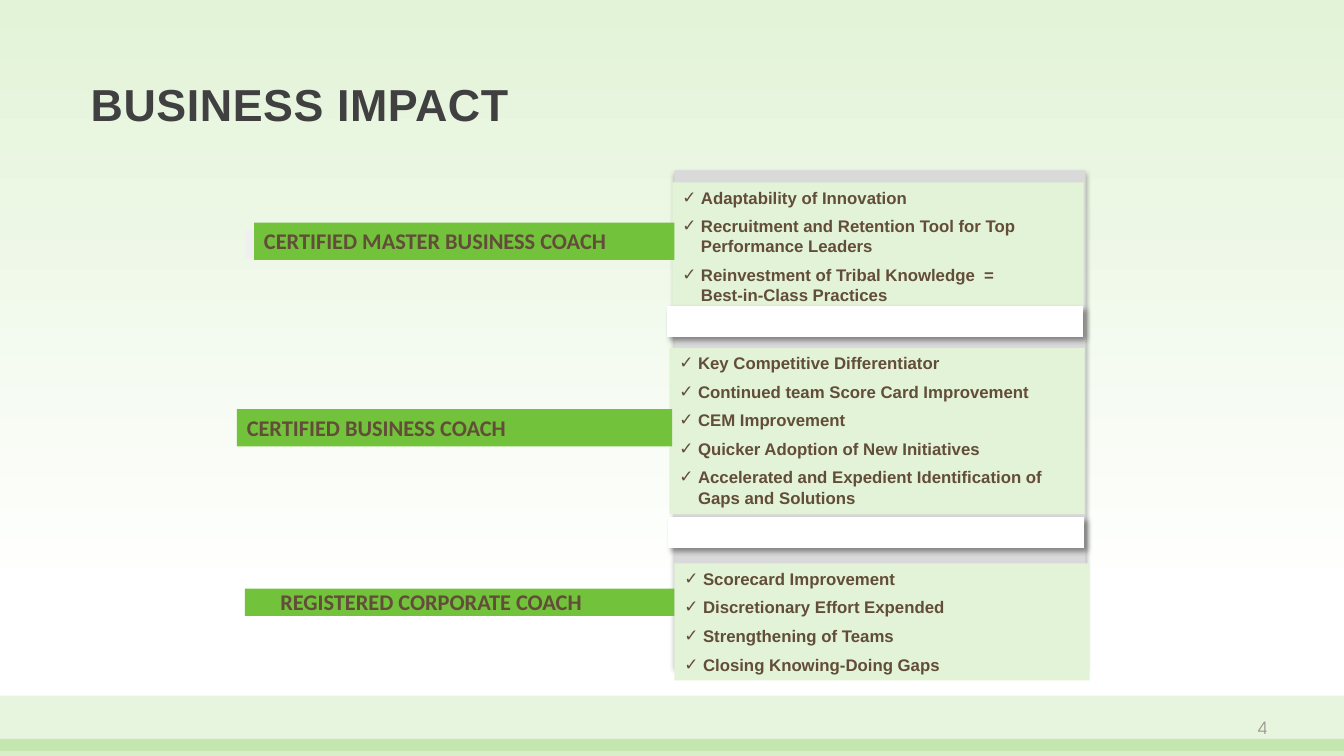
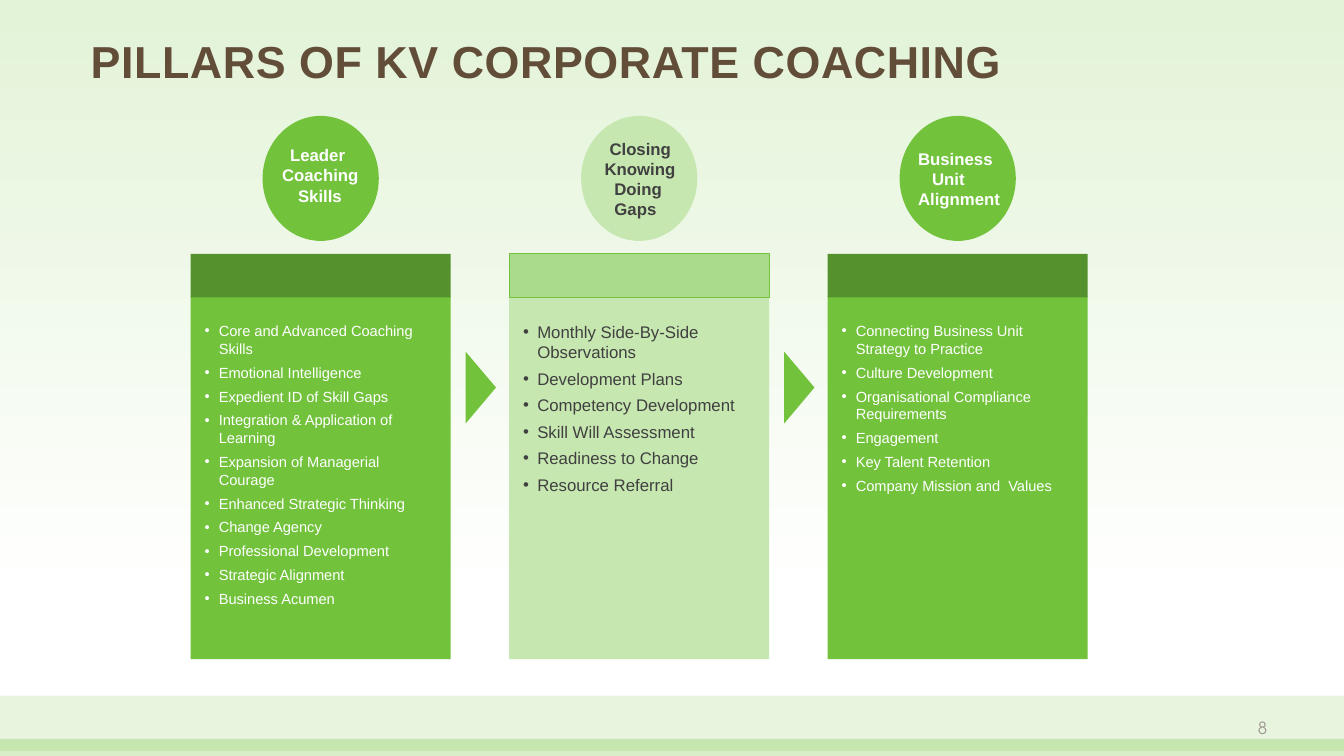
"""Build two coaching slides: business impact and coaching pillars."""
from copy import deepcopy
from dataclasses import dataclass

from lxml.etree import SubElement as Sub
from pptx import Presentation
from pptx.dml.color import RGBColor as Rgb
from pptx.enum.shapes import MSO_CONNECTOR as Link, MSO_SHAPE as Kind
from pptx.enum.text import MSO_ANCHOR as Anchor, MSO_AUTO_SIZE as Fit, PP_ALIGN as Align
from pptx.oxml.ns import qn
from pptx.util import Pt


@dataclass(frozen=True)
class Theme:
    """Colours, fonts and type sizes."""
    green: str = "72C23C"
    dark: str = "55922D"
    soft: str = "AADB8A"
    pale: str = "C7E7B1"
    mint: str = "E3F3D8"
    white: str = "FFFFFF"
    black: str = "000000"
    back: str = "D9D9D9"
    strip: str = "F0F0F0"
    brown: str = "624D38"
    ink: str = "404040"
    note: str = "9E9791"
    sans: str = "Arial"
    label: str = "Calibri"
    folio: str = "TeX Gyre Adventor"
    head: float = 32
    bar: float = 16
    text: float = 12
    small: float = 10.5


T = Theme()

BANDS = [(496.8, 39.6, 17), (527.8, 12.2, 28)]

IMPACT = dict(title="BUSINESS IMPACT", color=T.ink, top=51, page="4")
PANELS = [
    ((480.2, 130.3, 293.8, 92.2), [
        "Adaptability of Innovation",
        "Recruitment and Retention Tool for Top Performance Leaders",
        "Reinvestment of Tribal Knowledge  =\nBest-in-Class Practices"]),
    ((478.1, 248.4, 296.6, 118.8), [
        "Key Competitive Differentiator",
        "Continued team Score Card Improvement",
        "CEM Improvement",
        "Quicker Adoption of New Initiatives",
        "Accelerated and Expedient Identification of Gaps and Solutions"]),
    ((481.7, 402.5, 296.6, 83.5), [
        "Scorecard Improvement",
        "Discretionary Effort Expended",
        "Strengthening of Teams",
        "Closing Knowing-Doing Gaps"]),
]
BARS = [
    ("CERTIFIED MASTER BUSINESS COACH", (181.5, 159.1, 300.2, 26.6), 7.2),
    ("CERTIFIED BUSINESS COACH", (169.2, 292.3, 311, 26.6), 7.2),
    ("REGISTERED CORPORATE COACH", (175, 420.5, 306.7, 19.4), 25.2),
]
RULES = [(487.4, 229.7), (488.2, 380.2)]

PILLARS = dict(title="PILLARS OF KV CORPORATE COACHING", color=T.brown, top=20.2, page="8")
COLUMNS = [
    dict(name=["Leader", "Coaching", "Skills"], dents=[19.3, 13.6, 25], lift=2.5,
         fill=T.green, cap=T.dark, edge=None, ink=T.white, size=T.small,
         items=["Core and Advanced Coaching Skills", "Emotional Intelligence",
                "Expedient ID of Skill Gaps", "Integration & Application of Learning",
                "Expansion of Managerial Courage", "Enhanced Strategic Thinking",
                "Change Agency", "Professional Development", "Strategic Alignment",
                "Business Acumen"]),
    dict(name=["Closing", "Knowing", "Doing", "Gaps"], dents=[20, 16.5, 23.5, 23.5], lift=0,
         fill=T.pale, cap=T.soft, edge=T.green, ink=T.ink, size=T.text,
         items=["Monthly Side-By-Side Observations", "Development Plans",
                "Competency Development", "Skill Will Assessment",
                "Readiness to Change", "Resource Referral"]),
    dict(name=["Business", "Unit", "Alignment"], dents=[12.9, 22.9, 12.9], lift=0,
         fill=T.green, cap=T.dark, edge=None, ink=T.white, size=T.small,
         items=["Connecting Business Unit Strategy to Practice", "Culture Development",
                "Organisational Compliance Requirements", "Engagement",
                "Key Talent Retention", "Company Mission and  Values"]),
]


def points(nums):
    """Turn numbers into point lengths."""
    return [Pt(num) for num in nums]


def write(shape, lines, size=T.text, color=T.brown, font=T.sans, bold=False,
          align=Align.LEFT, anchor=Anchor.TOP, inset=(7.2, 3.6, 7.2, 3.6),
          gap=0, mark=None, hang=0, dents=None, track=0):
    """Fill a shape with formatted paragraphs."""
    frame = shape.text_frame
    frame.auto_size, frame.word_wrap, frame.vertical_anchor = Fit.NONE, True, anchor
    (frame.margin_left, frame.margin_top,
     frame.margin_right, frame.margin_bottom) = points(inset)
    frame.text = lines[0]
    for line in lines[1:]:
        frame.add_paragraph().text = line
    for para in frame.paragraphs:
        para.alignment, para.space_before = align, Pt(gap)
        for run in para.runs:
            face = run.font
            face.name, face.size, face.bold = font, Pt(size), bold
            face.color.rgb = Rgb.from_string(color)
    for pos, node in enumerate(shape.element.iter(qn("a:p"))):
        props = node.get_or_add_pPr()
        props.set("marL", str(Pt(dents[pos] if dents else hang)))
        props.set("indent", str(-Pt(hang)))
        if mark:
            Sub(props, qn("a:buFont")).set("typeface", font)
            Sub(props, qn("a:buChar")).set("char", mark)
        style = node.find(qn("a:r")).find(qn("a:rPr"))
        if track:
            style.set("spc", str(track))
        for stop in node.findall(qn("a:br")):
            stop.append(deepcopy(style))


def paint(shape, fill, edge=None, alpha=None):
    """Set fill and outline, and drop the shadow."""
    shape.shadow.inherit = False
    shape.fill.solid()
    shape.fill.fore_color.rgb = Rgb.from_string(fill)
    if edge:
        shape.line.color.rgb = Rgb.from_string(edge)
        shape.line.width = Pt(0.75)
    else:
        shape.line.fill.background()
    if alpha:
        tint = shape.element.spPr.find(".//" + qn("a:srgbClr"))
        Sub(tint, qn("a:alpha")).set("val", str(alpha * 1000))
    return shape


def draw(slide, box, fill, kind=Kind.RECTANGLE, **look):
    """Add a painted preset shape."""
    return paint(slide.shapes.add_shape(kind, *points(box)), fill, **look)


def shade(shape, alpha, blur, dist, angle):
    """Cast a black outer shadow."""
    props = shape.element.spPr
    node = props.find(qn("a:effectLst"))
    if node is None:
        node = Sub(props, qn("a:effectLst"))
    cast = Sub(node, qn("a:outerShdw"), blurRad=str(Pt(blur)), dist=str(Pt(dist)),
               dir=str(angle * 60000), algn="ctr", rotWithShape="0")
    tint = Sub(cast, qn("a:srgbClr"), val=T.black)
    Sub(tint, qn("a:alpha"), val=str(alpha * 1000))


def place(shape, box):
    """Move a placeholder to its box and to the front."""
    shape.left, shape.top, shape.width, shape.height = points(box)
    tree = shape.element.getparent()
    tree.append(shape.element)
    return shape


def start(deck, title, color, top, page):
    """Add a slide with title and number; return it with three list holders."""
    slide = deck.slides.add_slide(deck.slide_layouts[4])
    head, *lists, spare = slide.placeholders
    spare.element.getparent().remove(spare.element)
    write(place(head, (57.6, top, 835.2, 51)), [title], size=T.head, color=color,
          bold=True, track=40)
    folio = slide.shapes.add_textbox(*points((688.3, 505.4, 223.9, 28.8)))
    write(folio, [page], color=T.note, font=T.folio, align=Align.RIGHT,
          anchor=Anchor.MIDDLE)
    return slide, lists


def dress(deck, slide):
    """Give the master its gradient and footer bands."""
    master = deck.slide_master
    fill = master.background.fill
    fill.gradient()
    fill.gradient_angle = 270
    for stop, (color, pos) in zip(fill.gradient_stops, [(T.mint, 0), (T.white, 0.79)]):
        stop.color.rgb, stop.position = Rgb.from_string(color), pos
    tree = master.element.find(".//" + qn("p:spTree"))
    for top, high, alpha in BANDS:
        tree.append(draw(slide, (0, top, 960, high), T.green, alpha=alpha).element)


def impact(deck):
    """Build the business impact slide."""
    slide, lists = start(deck, **IMPACT)
    dress(deck, slide)
    draw(slide, (175, 164.2, 300, 20.2), T.strip)
    shade(draw(slide, (481.7, 121.7, 293.8, 354.2), T.back), 32, 3.5, 2.2, 90)
    for holder, (box, items) in zip(lists, PANELS):
        place(holder, box)
        paint(holder, T.mint)
        write(holder, items, bold=True, gap=6, mark="✓", hang=13.3)
    for left, mid in RULES:
        rule = slide.shapes.add_connector(
            Link.STRAIGHT, *points((left, mid, left + 275, mid)))
        rule.line.color.rgb, rule.line.width = Rgb.from_string(T.white), Pt(22)
        rule.element.spPr.find(qn("a:ln")).set("cap", "sq")
        shade(rule, 40, 4, 3, 45)
    for name, box, inset in BARS:
        write(draw(slide, box, T.green), [name], size=T.bar, font=T.label, bold=True,
              anchor=Anchor.MIDDLE, inset=(inset, 0, 0, 1))


def pillars(deck):
    """Build the pillars slide."""
    slide, lists = start(deck, **PILLARS)
    flat = (0, 0, 0, 0)
    for pos, (holder, col) in enumerate(zip(lists, COLUMNS)):
        left = 136.1 + 227.5 * pos
        draw(slide, (left + 51.5, 82.8, 83, 89.3), col["fill"], Kind.OVAL)
        label = slide.shapes.add_textbox(
            *points((left + 51.8, 83 - col["lift"], 83, 89.3)))
        write(label, col["name"], color=col["ink"], bold=True, anchor=Anchor.MIDDLE,
              inset=flat, dents=col["dents"])
        draw(slide, (left, 211.7, 185.8, 259.2), col["fill"])
        draw(slide, (left, 181.4, 185.8, 31), col["cap"], edge=col["edge"])
        place(holder, (left + 10.1, 229.9, 166.3, 230))
        write(holder, col["items"], size=col["size"], color=col["ink"], inset=flat,
              gap=4.5, mark="•", hang=10.1)
        if pos < len(COLUMNS) - 1:
            edge = left + 196.6
            path = slide.shapes.build_freeform(Pt(edge), Pt(251.3))
            path.add_line_segments([points((edge + 21.6, 276.8)), points((edge, 302.4))])
            paint(path.convert_to_shape(), T.green)


def main():
    """Build and save the deck."""
    deck = Presentation()
    deck.slide_width, deck.slide_height = Pt(960), Pt(540)
    impact(deck)
    pillars(deck)
    deck.save("out.pptx")


if __name__ == "__main__":
    main()
